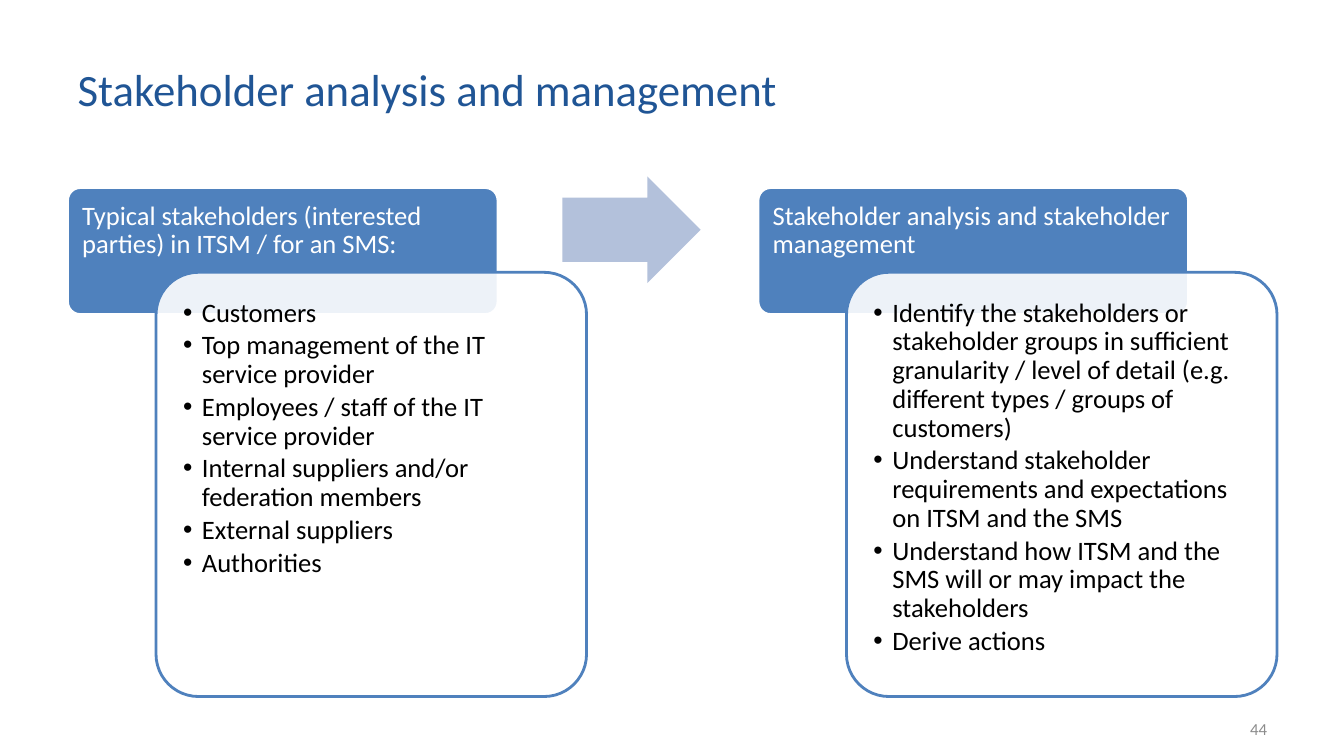
from lxml import etree
from pptx import Presentation
from pptx.dml.color import RGBColor
from pptx.enum.shapes import MSO_SHAPE
from pptx.enum.text import MSO_ANCHOR, PP_ALIGN
from pptx.oxml.ns import qn
from pptx.util import Pt

ROUNDED, ARROW = MSO_SHAPE.ROUNDED_RECTANGLE, MSO_SHAPE.RIGHT_ARROW
TOP, MIDDLE = MSO_ANCHOR.TOP, MSO_ANCHOR.MIDDLE
LEFT, RIGHT = PP_ALIGN.LEFT, PP_ALIGN.RIGHT

TITLE_BLUE = RGBColor(0x20, 0x55, 0x95)
BLUE = RGBColor(0x4F, 0x81, 0xBD)
ARROW_BLUE = RGBColor(0xB3, 0xC1, 0xDB)
WHITE = RGBColor(0xFF, 0xFF, 0xFF)
BLACK = RGBColor(0x00, 0x00, 0x00)
GREY = RGBColor(0x8C, 0x8C, 0x8C)

FONT = "Calibri"
TEXT_SIZE = 19
INSET = 10.5
INDENT = 13.5
CARD_WIDTH = 307.5
CARD_LEFT = 48.25
CARD_STEP = 493.2

CARDS = [
    ("Typical stakeholders (interested parties) in ITSM / for an SMS:", [
        "Customers",
        "Top management of the IT service provider",
        "Employees / staff of the IT service provider",
        "Internal suppliers and/or federation members",
        "External suppliers",
        "Authorities",
    ]),
    ("Stakeholder analysis and stakeholder management", [
        "Identify the stakeholders or stakeholder groups in sufficient granularity / "
        "level of detail (e.g. different types / groups of customers)",
        "Understand stakeholder requirements and expectations on ITSM and the SMS",
        "Understand how ITSM and the SMS will or may impact the stakeholders",
        "Derive actions",
    ]),
]


def add_span(para, text, size, color):
    span = para.add_run()
    span.text = text
    span.font.name = FONT
    span.font.size = Pt(size)
    span.font.color.rgb = color


def add_bullet(para):
    properties = para._p.get_or_add_pPr()
    properties.set("marL", str(Pt(INDENT)))
    properties.set("indent", str(-Pt(INDENT)))
    etree.SubElement(properties, qn("a:buFont")).set("typeface", "Arial")
    etree.SubElement(properties, qn("a:buChar")).set("char", "•")


def add_block(page, left, top, width, height, kind, fill, line=None, alpha=None):
    """Add a filled shape; alpha is its opacity in percent."""
    block = page.shapes.add_shape(kind, Pt(left), Pt(top), Pt(width), Pt(height))
    block.shadow.inherit = False
    block.fill.solid()
    block.fill.fore_color.rgb = fill
    if alpha is not None:
        color = block.fill._xPr.find(qn("a:solidFill"))[0]
        etree.SubElement(color, qn("a:alpha")).set("val", str(alpha * 1000))
    if line is None:
        block.line.fill.background()
    else:
        block.line.color.rgb = line
        block.line.width = Pt(2)
    return block


def add_text(page, left, top, width, height, texts, color, space_after, bulleted=False):
    box = page.shapes.add_textbox(Pt(left), Pt(top), Pt(width), Pt(height))
    frame = box.text_frame
    frame.word_wrap = True
    frame.vertical_anchor = TOP
    frame.margin_left = frame.margin_top = frame.margin_right = Pt(INSET)
    frame.margin_bottom = Pt(INSET if bulleted else 5.75)
    for index, text in enumerate(texts):
        para = frame.add_paragraph() if index else frame.paragraphs[0]
        if bulleted:
            add_bullet(para)
        para.line_spacing = 0.9
        para.space_after = Pt(space_after)
        add_span(para, text, TEXT_SIZE, color)


def add_card(page, left, heading, points):
    """Add a heading block with an overlapping panel of bullet points."""
    head = add_block(page, left, 134, CARD_WIDTH, 90.7, ROUNDED, BLUE, WHITE)
    head.adjustments[0] = 0.1
    add_text(page, left, 134, CARD_WIDTH, 60.5, [heading], WHITE, 6.65)
    panel = add_block(page, left + 63.25, 194.5, CARD_WIDTH, 303, ROUNDED, WHITE, BLUE, 90)
    panel.adjustments[0] = 0.1
    add_text(page, left + 72, 203.25, 289.5, 285.25, points, BLACK, 2.85, bulleted=True)


def add_title(page, text):
    title = page.shapes.title
    title.left, title.top, title.width, title.height = Pt(48.25), Pt(21.6), Pt(713.5), Pt(82.8)
    frame = title.text_frame
    frame.vertical_anchor = MIDDLE
    para = frame.paragraphs[0]
    para.alignment = LEFT
    add_span(para, text, 32, TITLE_BLUE)


def add_page_number(page, number):
    box = page.shapes.add_textbox(Pt(688.25), Pt(506.15), Pt(224), Pt(28.8))
    frame = box.text_frame
    frame.word_wrap = True
    frame.vertical_anchor = MIDDLE
    para = frame.paragraphs[0]
    para.alignment = RIGHT
    add_span(para, number, 12, GREY)


def main():
    deck = Presentation()
    deck.slide_width, deck.slide_height = Pt(960), Pt(540)
    page = deck.slides.add_slide(deck.slide_layouts.get_by_name("Title Only"))
    add_title(page, "Stakeholder analysis and management")
    for index, (heading, points) in enumerate(CARDS):
        add_card(page, CARD_LEFT + index * CARD_STEP, heading, points)
    arrow = add_block(page, 401.75, 126, 98.75, 76.3, ARROW, ARROW_BLUE)
    arrow.adjustments[0], arrow.adjustments[1] = 0.6, 0.5
    add_page_number(page, "44")
    deck.save("out.pptx")


if __name__ == "__main__":
    main()
